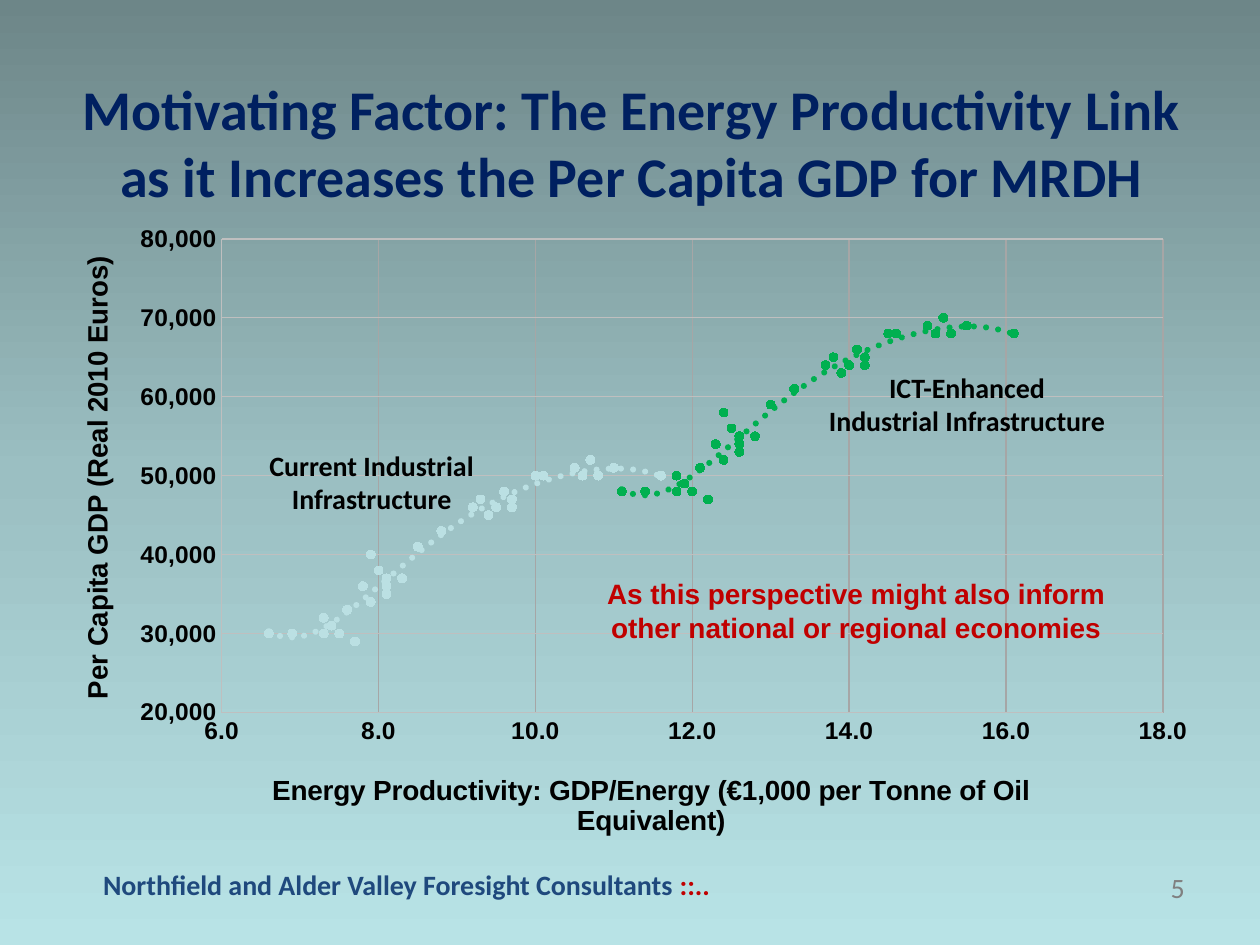
import copy

import lxml.etree
import pptx
import pptx.chart.data
import pptx.dml.color
import pptx.enum.chart
import pptx.enum.text
import pptx.oxml
import pptx.oxml.ns
import pptx.util

Inches = pptx.util.Inches
Pt = pptx.util.Pt
qn = pptx.oxml.ns.qn
CENTER = pptx.enum.text.PP_ALIGN.CENTER
LEFT = pptx.enum.text.PP_ALIGN.LEFT
RIGHT = pptx.enum.text.PP_ALIGN.RIGHT
TOP = pptx.enum.text.MSO_ANCHOR.TOP
MIDDLE = pptx.enum.text.MSO_ANCHOR.MIDDLE

COLORS = {
    "navy": "002060", "blue": "1F497D", "red": "C00000", "gray": "808080",
    "black": "000000", "axis": "BFBFBF", "grid": "A6A6A6",
    "current": "BBE0E3", "enhanced": "00B050",
}
BACKGROUND = [(0, "6D8688"), (0.5, "9BBFC2"), (1, "B8E3E6")]

TITLE = ("Motivating Factor: The Energy Productivity Link "
         "as it Increases the Per Capita GDP for MRDH")
TITLE_BOX = (0.36, 0.5, 9.31, 1.25)

# Box, alignment, anchor, wrap, font, bold, paragraphs of (text, color) runs
TEXTS = [
    ((0.72, 6.82, 5.57, 0.39), LEFT, MIDDLE, False, "Calibri", True,
     [[("Northfield and Alder Valley Foresight Consultants ", "blue"), ("::..", "red")]]),
    ((8.42, 6.86, 1.08, 0.5), RIGHT, TOP, True, "Calibri", False, [[("5", "gray")]]),
    ((1.81, 3.2, 2.28, 1.25), CENTER, MIDDLE, True, "Calibri", True,
     [[("Current Industrial Infrastructure", "black")]]),
    ((6.39, 2.58, 2.57, 1.25), CENTER, MIDDLE, True, "Calibri", True,
     [[("ICT-Enhanced", "black")], [("Industrial Infrastructure", "black")]]),
    ((4.42, 4.53, 4.75, 0.64), CENTER, TOP, True, "Arial", True,
     [[("As this perspective might also inform other national or regional economies", "red")]]),
]

# Energy productivity and per capita GDP in thousands, current infrastructure
POINTS = [
    (6.6, 30), (6.9, 30), (7.7, 29), (7.5, 30), (7.3, 30), (7.4, 31), (7.3, 32),
    (7.3, 32), (7.6, 33), (7.9, 34), (8.1, 35), (7.8, 36), (8.1, 36), (8.1, 37),
    (8.3, 37), (8, 38), (7.9, 40), (8.5, 41), (8.8, 43), (9.4, 45), (9.7, 46),
    (9.7, 47), (9.5, 46), (9.2, 46), (9.3, 47), (9.6, 48), (10.1, 50), (10.5, 51),
    (10.7, 52), (10.6, 50), (10, 50), (11, 51), (10.8, 50), (10.8, 50), (11.6, 50),
]
# Name, color, shift in productivity, shift in thousands of GDP
SERIES = [("Series 1", "current", 0, 0), ("Series 2", "enhanced", 4.5, 18)]
TREND_ORDER = 5
CHART_BOX = (0.5, 1.75, 9, 4.95)
PLOT_LAYOUT = {"x": 0.14, "y": 0.03, "w": 0.83, "h": 0.77}
AXES = {
    "category_axis": dict(
        title="Energy Productivity: GDP/Energy (€1,000 per Tonne of Oil Equivalent)",
        title_at={"x": 0.18, "y": 0.89}, scale=(6, 18, 2), number_format="0.0", grid="grid"),
    "value_axis": dict(
        title="Per Capita GDP (Real 2010 Euros)",
        title_at={"x": 0.01, "y": 0.06}, scale=(20000, 80000, 10000),
        number_format="#,##0", grid="axis"),
}


def rgb(name):
    return pptx.dml.color.RGBColor.from_string(COLORS[name])


def style_font(font, size, color, bold, name):
    font.size, font.bold, font.name = Pt(size), bold, name
    font.color.rgb = rgb(color)


def style_line(line, color):
    line.color.rgb = rgb(color)
    line.width = Pt(0.75)


def paint_background(slide):
    fill = slide.background.fill
    fill.gradient()
    fill.gradient_angle = 270
    first_stop = fill.gradient_stops[0]._gs
    first_stop.addnext(copy.deepcopy(first_stop))
    for stop, (position, color) in zip(fill.gradient_stops, BACKGROUND):
        stop.position = position
        stop.color.rgb = pptx.dml.color.RGBColor.from_string(color)


def add_title(slide):
    title = slide.shapes.title
    title.left, title.top, title.width, title.height = map(Inches, TITLE_BOX)
    frame = title.text_frame
    frame.auto_size = pptx.enum.text.MSO_AUTO_SIZE.NONE
    frame.vertical_anchor = MIDDLE
    paragraph = frame.paragraphs[0]
    paragraph.alignment = CENTER
    run = paragraph.add_run()
    run.text = TITLE
    style_font(run.font, 32, "navy", True, "Calibri")


def add_text(slide, box, alignment, anchor, wrap, font_name, bold, paragraphs):
    frame = slide.shapes.add_textbox(*map(Inches, box)).text_frame
    frame.word_wrap = wrap
    frame.vertical_anchor = anchor
    for index, runs in enumerate(paragraphs):
        paragraph = frame.add_paragraph() if index else frame.paragraphs[0]
        paragraph.alignment = alignment
        for text, color in runs:
            run = paragraph.add_run()
            run.text = text
            style_font(run.font, 16, color, bold, font_name)


def set_layout(parent, index, fractions, inner=False):
    """Place a chart part by fractions of the chart's size."""
    for old in parent.findall(qn("c:layout")):
        parent.remove(old)
    layout = pptx.oxml.parse_xml(f'<c:layout {pptx.oxml.ns.nsdecls("c")}/>')
    manual = lxml.etree.SubElement(layout, qn("c:manualLayout"))
    settings = [("layoutTarget", "inner")] if inner else []
    settings += [("xMode", "edge"), ("yMode", "edge"), *fractions.items()]
    for tag, value in settings:
        lxml.etree.SubElement(manual, qn(f"c:{tag}")).set("val", str(value))
    parent.insert(index, layout)


def format_axis(axis, title, title_at, scale, number_format, grid):
    axis.minimum_scale, axis.maximum_scale, axis.major_unit = scale
    axis.major_tick_mark = axis.minor_tick_mark = pptx.enum.chart.XL_TICK_MARK.NONE
    axis.tick_labels.number_format = number_format
    axis.tick_labels.number_format_is_linked = False
    style_font(axis.tick_labels.font, 14, "black", True, "Arial")
    style_line(axis.format.line, "axis")
    axis.has_major_gridlines = True
    style_line(axis.major_gridlines.format.line, grid)
    run = axis.axis_title.text_frame.paragraphs[0].add_run()
    run.text = title
    style_font(run.font, 16, "black", True, "Arial")
    set_layout(axis.axis_title._element, 1, title_at)


def add_trendline(series, color):
    trendline = pptx.oxml.parse_xml(
        f'<c:trendline {pptx.oxml.ns.nsdecls("c", "a")}>'
        f'<c:spPr><a:ln w="{Pt(3.5)}" cap="rnd"><a:solidFill><a:srgbClr val="{COLORS[color]}"/>'
        '</a:solidFill><a:prstDash val="sysDot"/></a:ln></c:spPr>'
        f'<c:trendlineType val="poly"/><c:order val="{TREND_ORDER}"/>'
        '<c:dispRSqr val="0"/><c:dispEq val="0"/></c:trendline>')
    series._element.find(qn("c:xVal")).addprevious(trendline)


def add_scatter(slide):
    data = pptx.chart.data.XyChartData()
    for name, _, shift_x, shift_y in SERIES:
        series_data = data.add_series(name)
        for x, y in POINTS:
            series_data.add_data_point(round(x + shift_x, 1), (y + shift_y) * 1000)
    chart = slide.shapes.add_chart(
        pptx.enum.chart.XL_CHART_TYPE.XY_SCATTER, *map(Inches, CHART_BOX), data).chart
    chart.has_legend = chart.has_title = False
    style_font(chart.font, 10, "black", False, "Arial")
    plot = chart.plots[0]
    plot.vary_by_categories = False
    set_layout(plot._element.getparent(), 0, PLOT_LAYOUT, inner=True)
    for name, settings in AXES.items():
        format_axis(getattr(chart, name), **settings)
    for series, (_, color, _, _) in zip(plot.series, SERIES):
        series.format.line.fill.background()
        marker = series.marker
        marker.style = pptx.enum.chart.XL_MARKER_STYLE.CIRCLE
        marker.size = 5
        marker.format.fill.solid()
        marker.format.fill.fore_color.rgb = rgb(color)
        marker.format.line.color.rgb = rgb(color)
        add_trendline(series, color)


def main():
    presentation = pptx.Presentation()
    presentation.slide_width, presentation.slide_height = Inches(10), Inches(7.5)
    slide = presentation.slides.add_slide(presentation.slide_layouts[5])
    paint_background(slide)
    add_title(slide)
    add_scatter(slide)
    for text in TEXTS:
        add_text(slide, *text)
    presentation.save("out.pptx")


if __name__ == "__main__":
    main()
